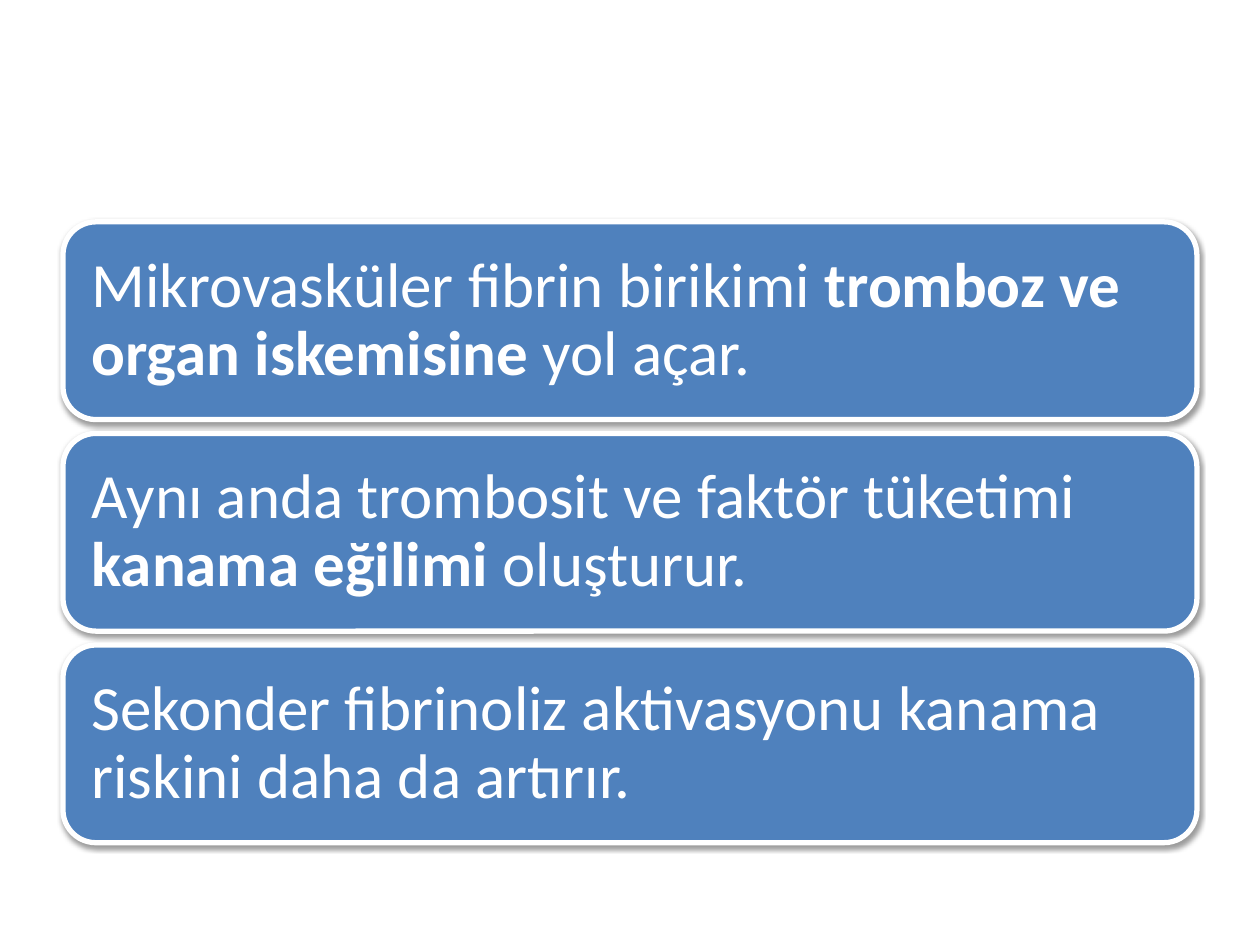
from lxml.etree import SubElement
from pptx import Presentation
from pptx.dml.color import RGBColor
from pptx.enum.shapes import MSO_SHAPE
from pptx.enum.text import MSO_ANCHOR, PP_ALIGN
from pptx.oxml.ns import qn
from pptx.util import Pt

COLORS = {"card": "4F81BD", "white": "FFFFFF", "shadow": "000000"}
LEFT, TOP, WIDTH, HEIGHT, GAP = 36, 126.8, 648, 113, 7.9
CARDS = [
    [("Mikrovasküler fibrin birikimi ", False),
     ("tromboz ve organ iskemisine", True),
     (" yol açar.", False)],
    [("Aynı anda trombosit ve faktör tüketimi ", False),
     ("kanama eğilimi", True),
     (" oluşturur.", False)],
    [("Sekonder fibrinoliz aktivasyonu kanama riskini daha da artırır.", False)],
]


def rgb(name):
    return RGBColor.from_string(COLORS[name])


def add_text(p, text, size=36, font="Calibri", color="white", bold=False):
    r = p.add_run()
    r.text = text
    r.font.size = Pt(size)
    r.font.name = font
    r.font.bold = bold
    r.font.color.rgb = rgb(color)


class Deck:
    def __init__(self, width, height):
        self.prs = Presentation()
        self.prs.slide_width, self.prs.slide_height = Pt(width), Pt(height)
        self.s = self.prs.slides.add_slide(self.prs.slide_layouts[6])

    def shadow(self, sp, blur=3.15, dist=1.57, alpha=38):
        sp.shadow.inherit = False
        effects = sp._element.spPr.find(qn("a:effectLst"))
        outer = SubElement(effects, qn("a:outerShdw"), blurRad=str(Pt(blur)),
                           dist=str(Pt(dist)), dir="5400000", rotWithShape="0")
        clr = SubElement(outer, qn("a:srgbClr"), val=COLORS["shadow"])
        SubElement(clr, qn("a:alpha"), val=str(alpha * 1000))

    def card(self, x, y, w, h, runs, inset=10.8):
        sp = self.s.shapes.add_shape(MSO_SHAPE.ROUNDED_RECTANGLE, Pt(x), Pt(y), Pt(w), Pt(h))
        sp.fill.solid()
        sp.fill.fore_color.rgb = rgb("card")
        sp.line.color.rgb = rgb("white")
        sp.line.width = Pt(3)
        self.shadow(sp)
        tf = sp.text_frame
        tf.word_wrap = True
        tf.vertical_anchor = MSO_ANCHOR.MIDDLE
        tf.margin_left = tf.margin_right = tf.margin_top = tf.margin_bottom = Pt(inset)
        p = tf.paragraphs[0]
        p.alignment = PP_ALIGN.LEFT
        p.line_spacing = 0.9
        for text, bold in runs:
            add_text(p, text, bold=bold)


def main():
    deck = Deck(720, 540)
    for i, runs in enumerate(CARDS):
        deck.card(LEFT, TOP + i * (HEIGHT + GAP), WIDTH, HEIGHT, runs)
    deck.prs.save("out.pptx")


if __name__ == "__main__":
    main()
